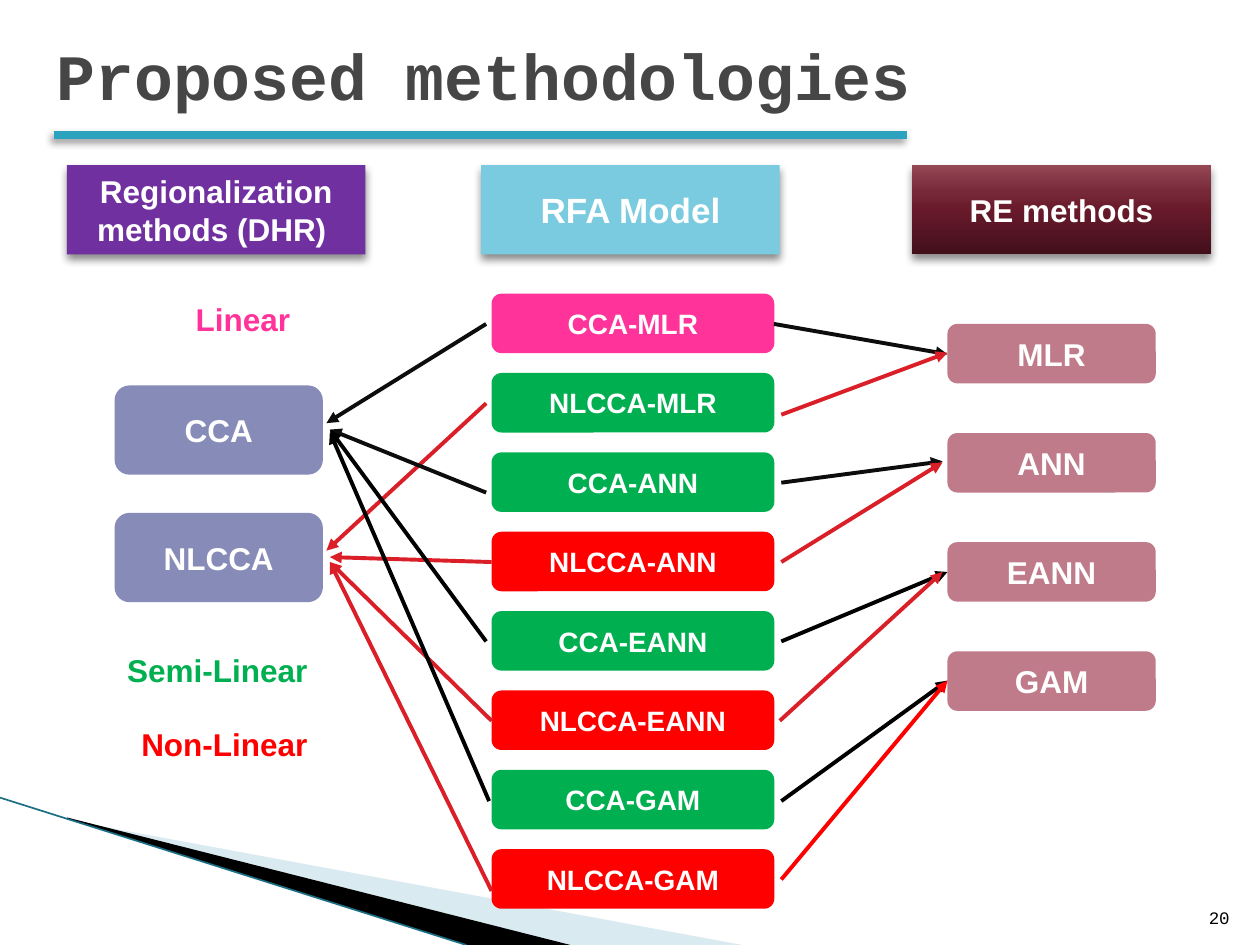
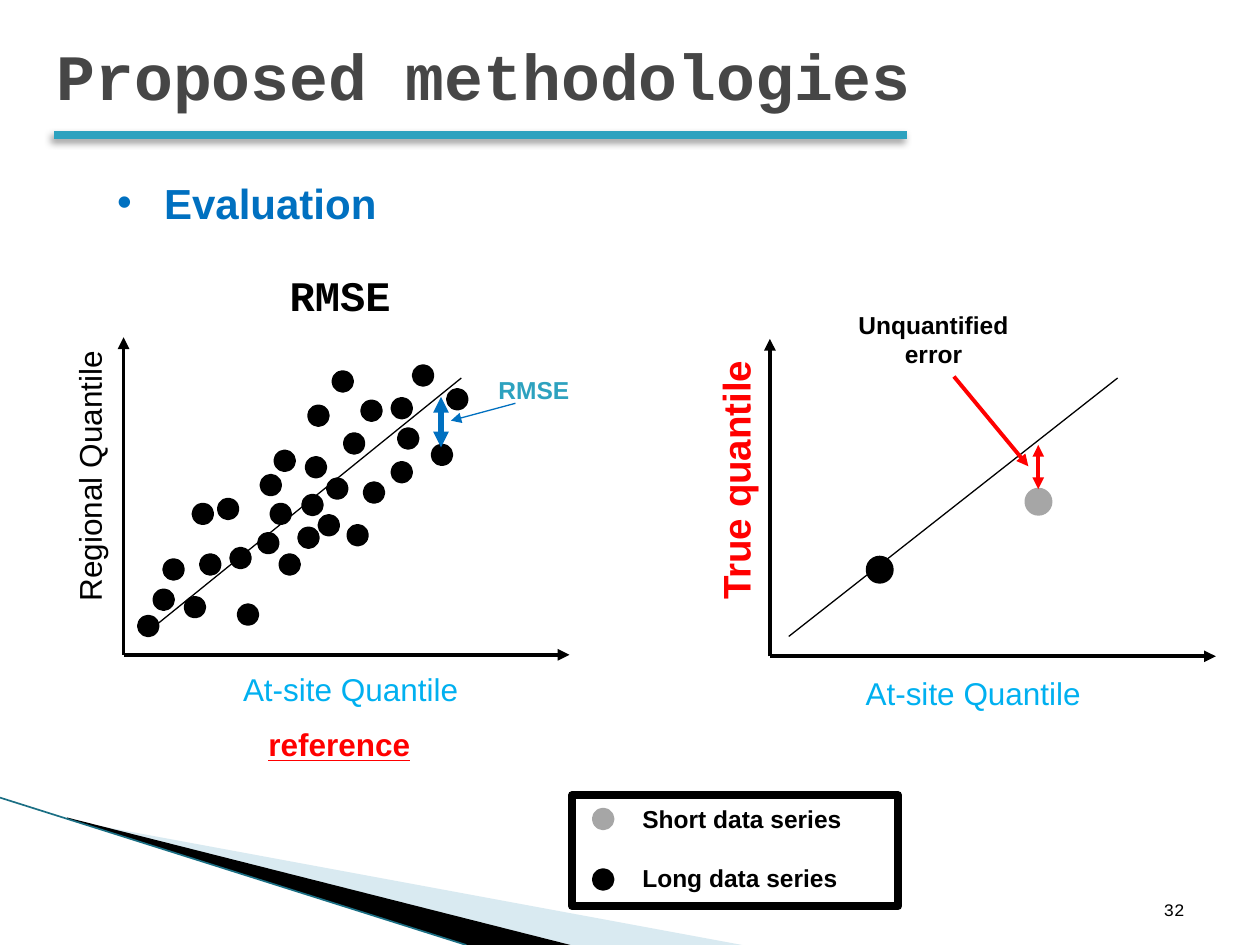
import pptx
import pptx.util
import pptx.dml.color
import pptx.enum.shapes
import pptx.enum.text
import pptx.oxml.ns
from dataclasses import dataclass
from lxml import etree

Cm = pptx.util.Cm
Pt = pptx.util.Pt
Shapes = pptx.enum.shapes.MSO_SHAPE
Align = pptx.enum.text.PP_ALIGN
Anchor = pptx.enum.text.MSO_ANCHOR
qn = pptx.oxml.ns.qn


@dataclass(frozen=True)
class Theme:
    sans: str = "Arial"
    mono: str = "Courier New"
    # Type sizes
    title_size: float = 37
    large: float = 24
    axis_size: float = 22
    header_size: float = 20
    body: float = 18
    model_size: float = 16
    small: float = 14
    number_size: float = 10
    # Colours
    black: str = "000000"
    ink: str = "0D0D0D"
    white: str = "FFFFFF"
    heading: str = "464646"
    teal: str = "2DA2BF"
    edge: str = "1B6F84"
    pale: str = "A0CBDC"
    sky: str = "7ACBE0"
    cyan: str = "00B0F0"
    blue: str = "0070C0"
    purple: str = "7030A0"
    lavender: str = "878BB8"
    rose: str = "C07B8A"
    pink: str = "FF3399"
    green: str = "00B050"
    red: str = "FF0000"
    crimson: str = "DA1F28"
    grey: str = "A6A6A6"
    wine: tuple = ((0, "420F1A"), (50, "681A2B"), (70, "772939"), (100, "944755"))


def rgb(colour):
    return pptx.dml.color.RGBColor.from_string(colour)


def add_node(parent, tag, **attributes):
    return etree.SubElement(parent, qn(tag), {key: str(value) for key, value in attributes.items()})


def add_colour(parent, colour, alpha=None):
    node = add_node(parent, "a:srgbClr", val=colour)
    if alpha is not None:
        add_node(node, "a:alpha", val=alpha * 1000)


class Painter:
    def __init__(self, deck, theme):
        self.deck = deck
        self.theme = theme
        self.page = None

    def new_page(self, title, number, number_right, number_bottom):
        theme = self.theme
        self.page = self.deck.slides.add_slide(self.deck.slide_layouts[5])
        # Corner decoration
        self.wedge([(1.4, 16.54), (14.96, 19.05), (11.5, 19.05), (1.4, 16.51)], theme.pale, 40)
        self.wedge([(1.35, 16.48), (11.5, 19.05), (9.4, 19.05), (1.37, 16.51)], theme.black)
        self.link((0, 16.08), (9.4, 19.05), theme.edge, 0.95, tail=False)
        # Title and rule
        box = self.page.shapes.title
        box.left, box.top, box.width, box.height = Cm(0.89), Cm(0), Cm(22.86), Cm(3.02)
        self.set_text(box, title, theme.title_size, theme.heading, font=theme.mono,
                      align=Align.LEFT, anchor=Anchor.MIDDLE)
        rule = self.link((1.09, 2.72), (18.29, 2.72), theme.teal, 4.5, tail=False)
        self.cast_shadow(rule, 40, 4, 135)
        # Page number
        self.text(number, number_right - 2, number_bottom - 1.02, 2, 1.02, theme.number_size,
                  theme.black, font=theme.mono, bold=False, align=Align.RIGHT,
                  anchor=Anchor.BOTTOM)

    def set_text(self, box, words, size, colour, font=None, bold=True, underline=False,
                 align=Align.CENTER, anchor=Anchor.TOP, bullet=False):
        frame = box.text_frame
        frame.word_wrap = True
        frame.auto_size = pptx.enum.text.MSO_AUTO_SIZE.NONE
        frame.vertical_anchor = anchor
        para = frame.paragraphs[0]
        para.alignment = align
        if bullet:
            properties = para._p.get_or_add_pPr()
            properties.set("marL", str(Cm(0.95)))
            properties.set("indent", str(-Cm(0.95)))
            add_node(properties, "a:buFont", typeface=self.theme.sans)
            add_node(properties, "a:buChar", char="•")
        span = para.add_run()
        span.text = words
        span.font.name = font or self.theme.sans
        span.font.size = Pt(size)
        span.font.bold = bold
        span.font.underline = underline
        span.font.color.rgb = rgb(colour)

    def text(self, words, left, top, width, height, size, colour,
             align=Align.LEFT, rotation=0, **style):
        box = self.page.shapes.add_textbox(Cm(left), Cm(top), Cm(width), Cm(height))
        box.rotation = rotation
        self.set_text(box, words, size, colour, align=align, **style)

    def shape(self, kind, left, top, width, height, fill=None, outline=None):
        box = self.page.shapes.add_shape(kind, Cm(left), Cm(top), Cm(width), Cm(height))
        box.shadow.inherit = False
        if fill:
            box.fill.solid()
            box.fill.fore_color.rgb = rgb(fill)
        else:
            box.fill.background()
        if outline:
            box.line.color.rgb = rgb(outline)
            box.line.width = Pt(4.33)
        else:
            box.line.fill.background()
        return box

    def label(self, words, left, top, width, height, size, fill, kind=Shapes.ROUNDED_RECTANGLE):
        box = self.shape(kind, left, top, width, height, fill)
        self.set_text(box, words, size, self.theme.white, anchor=Anchor.MIDDLE)
        return box

    def header(self, words, left, size, fill):
        box = self.label(words, left, 3.33, 6.02, 1.8, size, fill, Shapes.RECTANGLE)
        self.cast_shadow(box, 45, 5, 90)
        return box

    def dot(self, left, top, diameter, colour):
        self.shape(Shapes.FLOWCHART_CONNECTOR, left, top, diameter, diameter, colour, colour)

    def wedge(self, points, colour, alpha=None):
        corners = [(Cm(x), Cm(y)) for x, y in points]
        builder = self.page.shapes.build_freeform(*corners[0])
        builder.add_line_segments(corners[1:], close=True)
        outline = builder.convert_to_shape()
        outline.shadow.inherit = False
        outline.line.fill.background()
        outline.fill.solid()
        outline.fill.fore_color.rgb = rgb(colour)
        if alpha is not None:
            node = outline._element.spPr.find(qn("a:solidFill"))[0]
            add_node(node, "a:alpha", val=alpha * 1000)

    def link(self, start, end, colour, width=2.25, head=False, tail=True):
        line = self.page.shapes.add_connector(
            pptx.enum.shapes.MSO_CONNECTOR.STRAIGHT,
            Cm(start[0]), Cm(start[1]), Cm(end[0]), Cm(end[1]))
        line.line.color.rgb = rgb(colour)
        line.line.width = Pt(width)
        stroke = line._element.spPr.find(qn("a:ln"))
        if head:
            add_node(stroke, "a:headEnd", type="triangle")
        if tail:
            add_node(stroke, "a:tailEnd", type="triangle")
        add_node(line._element.spPr, "a:effectLst")
        return line

    def cast_shadow(self, item, alpha, blur, angle):
        effects = item._element.spPr.find(qn("a:effectLst"))
        shadow = add_node(effects, "a:outerShdw", blurRad=int(Pt(blur)), dist=int(Pt(3)),
                          dir=angle * 60000, rotWithShape=0)
        add_colour(shadow, self.theme.black, alpha)

    def blend(self, box, stops):
        box.fill.gradient()
        box.fill.gradient_angle = 90
        stop_list = box._element.spPr.find(qn("a:gradFill")).find(qn("a:gsLst"))
        for old in list(stop_list):
            stop_list.remove(old)
        for position, colour in stops:
            add_colour(add_node(stop_list, "a:gs", pos=position * 1000), colour)

    def axes(self, x, y):
        self.link((x, y), (x, y - 6.4), self.theme.black)
        self.link((x, y), (x + 8.99, y), self.theme.black)


def build_model_page(painter, title):
    theme = painter.theme
    painter.new_page(title, "20", 25.04, 18.83)

    # Column headers
    painter.header("Regionalization methods (DHR) ", 1.35, theme.body, theme.purple)
    painter.header("RFA Model", 9.7, theme.header_size, theme.sky)
    estimation = painter.header("RE methods", 18.39, theme.body, theme.rose)
    painter.blend(estimation, theme.wine)

    # Regionalization and estimation methods
    for row, name in enumerate(["CCA", "NLCCA"]):
        painter.label(name, 2.31, 7.77 + 2.57 * row, 4.2, 1.8, theme.body, theme.lavender)
    for row, name in enumerate(["MLR", "ANN", "EANN", "GAM"]):
        painter.label(name, 19.1, 6.53 + 2.2 * row, 4.2, 1.2, theme.body, theme.rose)

    # Models: name, fill, link colours, left link, right link
    ink, black, red, crimson = theme.ink, theme.black, theme.red, theme.crimson
    models = [
        ("CCA-MLR", theme.pink, ink, ink,
         (9.8, 6.53), (6.58, 8.53), (15.6, 6.53), (19.1, 7.14)),
        ("NLCCA-MLR", theme.green, crimson, crimson,
         (9.8, 8.13), (6.58, 11.1), (15.75, 8.36), (19.1, 7.11)),
        ("CCA-ANN", theme.green, ink, ink,
         (9.8, 9.93), (6.65, 8.66), (15.75, 9.73), (19, 9.3)),
        ("NLCCA-ANN", red, crimson, crimson,
         (9.91, 11.33), (6.65, 11.23), (15.75, 11.33), (19, 9.32)),
        ("CCA-EANN", theme.green, black, black,
         (9.8, 12.93), (6.65, 8.66), (15.75, 12.93), (19.1, 11.53)),
        ("NLCCA-EANN", red, crimson, crimson,
         (9.91, 14.53), (6.65, 11.33), (15.72, 14.53), (19, 11.53)),
        ("CCA-GAM", theme.green, black, black,
         (9.86, 16.15), (6.65, 8.71), (15.75, 16.15), (19.1, 13.72)),
        ("NLCCA-GAM", red, crimson, red,
         (9.91, 17.96), (6.65, 11.33), (15.75, 17.73), (19.1, 13.72)),
    ]
    for row, model in enumerate(models):
        name, fill, left_colour, right_colour, left_from, left_to, right_from, right_to = model
        painter.label(name, 9.91, 5.92 + 1.6 * row, 5.7, 1.2, theme.model_size, fill)
        painter.link(left_from, left_to, left_colour)
        painter.link(right_from, right_to, right_colour)

    # Colour key
    for words, left, top, colour in [("Linear", 1.35, 5.92, theme.pink),
                                     ("Semi-Linear", 1.7, 13, theme.green),
                                     ("Non-Linear", 1.7, 14.5, theme.red)]:
        painter.text(words, left, top, 4.75, 1.02, theme.body, colour, align=Align.RIGHT)


def build_evaluation_page(painter, title):
    theme = painter.theme
    painter.new_page(title, "32", 24.13, 18.67)
    painter.text("Evaluation", 2.11, 3.45, 6, 1.27, theme.large, theme.blue, bullet=True)

    # Regional plot
    painter.axes(2.49, 13.2)
    painter.link((2.9, 12.8), (9.3, 7.62), theme.black, 0.75, tail=False)
    painter.text("RMSE", 5.59, 5.31, 2.8, 1.27, theme.large, theme.black, font=theme.mono)
    painter.text("Regional Quantile", -0.99, 9.07, 5.59, 1.02, theme.body, theme.black,
                 bold=False, rotation=270)
    painter.text("reference", 5.16, 14.5, 3.6, 1.02, theme.body, theme.red, underline=True)
    sites = [
        (5.26, 10.8), (3.15, 11.94), (6.99, 8.79), (7.95, 8.08), (6.22, 9.27), (8.08, 8.69),
        (5.51, 10.21), (4.85, 12.24), (3.35, 11.33), (5.69, 11.23), (3.78, 12.09), (6.76, 7.54),
        (9.07, 7.9), (6.65, 9.7), (8.76, 9.02), (6.48, 10.44), (4.45, 10.11), (4.09, 11.23),
        (4.7, 11.1), (2.84, 12.47), (6.27, 8.23), (7.39, 9.78), (5.59, 9.14), (7.34, 8.13),
        (5.31, 9.63), (6.15, 10.03), (3.94, 10.21), (7.95, 9.37), (8.38, 7.42), (6.07, 10.69),
        (7.06, 10.64),
    ]
    for left, top in sites:
        painter.dot(left, top, 0.3, theme.black)
    painter.link((10.39, 8.13), (9.09, 8.48), theme.blue, 0.75)
    painter.link((8.89, 8), (8.89, 9.02), theme.blue, 3, head=True)
    painter.text("RMSE", 9.8, 7.44, 3.4, 0.86, theme.small, theme.teal)

    # True quantile plot
    painter.axes(15.52, 13.23)
    painter.link((15.9, 12.83), (22.53, 7.62), theme.black, 0.75, tail=False)
    painter.text("True quantile", 12.07, 8.99, 5.51, 1.19, theme.axis_size, theme.red,
                 rotation=270)
    painter.dot(17.53, 11.28, 0.41, theme.black)
    painter.dot(20.73, 9.91, 0.41, theme.grey)
    painter.text("Unquantified error", 16.89, 6.12, 3.86, 1.45, theme.small, theme.black,
                 align=Align.CENTER)
    painter.link((19.23, 7.59), (20.73, 9.4), theme.red)
    painter.link((20.93, 8.97), (20.93, 9.86), theme.red, head=True)

    # Horizontal axis names
    for left, top in [(4.65, 13.39), (17.2, 13.46)]:
        painter.text("At-site Quantile", left, top, 5.05, 1.02, theme.body, theme.cyan,
                     bold=False)

    # Legend
    painter.shape(Shapes.RECTANGLE, 11.53, 16.03, 6.58, 2.24, outline=theme.black)
    for row, (words, colour) in enumerate([("Short data series", theme.grey),
                                           ("Long data series", theme.black)]):
        painter.dot(12.01, 16.36 + 1.22 * row, 0.3, colour)
        painter.text(words, 12.7, 16.08 + 1.2 * row, 4.7, 0.86, theme.small, theme.black)


def main():
    deck = pptx.Presentation()
    deck.slide_width, deck.slide_height = Cm(25.4), Cm(19.05)
    painter = Painter(deck, Theme())
    title = "Proposed methodologies"
    build_model_page(painter, title)
    build_evaluation_page(painter, title)
    deck.save("out.pptx")


if __name__ == "__main__":
    main()
